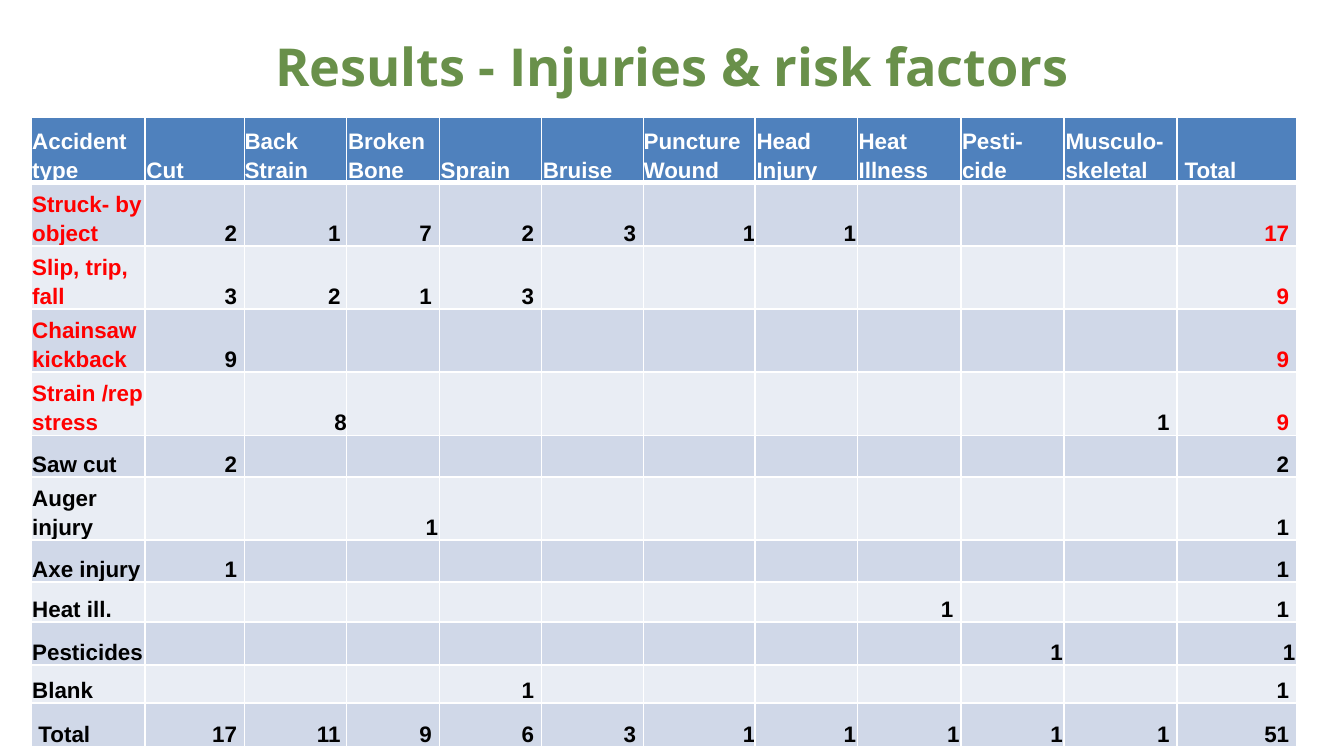
from dataclasses import dataclass

from lxml import etree
from pptx import Presentation
from pptx import util as u
from pptx.dml.color import RGBColor
from pptx.enum import text
from pptx.oxml import ns


@dataclass(frozen=True)
class Theme:
    title: str = "69904A"
    header: str = "4F81BD"
    bands: tuple = ("D0D8E8", "E9EDF4")
    white: str = "FFFFFF"
    ink: str = "000000"
    alert: str = "FF0000"
    title_font: str = "Open Sans"
    table_font: str = "Arial"
    title_size: int = 28
    table_size: int = 12
    line_spacing: float = 1.15
    rule: int = 1
    header_rule: int = 3


THEME = Theme()

HEADINGS = ["Accident type", "Cut", "Back\nStrain", "Broken Bone", "Sprain", "Bruise",
            "Puncture\nWound", "Head\nInjury", "Heat\nIllness", "Pesti-cide",
            "Musculo-skeletal", " Total"]
INJURIES = [
    "Struck- by object|2 |1 |7 |2 |3 |1|1||||17 ",
    "Slip, trip, fall|3 |2 |1 |3 |||||||9 ",
    "Chainsaw kickback|9 ||||||||||9 ",
    "Strain /rep stress||8||||||||1 |9 ",
    "Saw cut|2 ||||||||||2 ",
    "Auger injury|||1||||||||1 ",
    "Axe injury|1 ||||||||||1 ",
    "Heat ill.||||||||1 |||1 ",
    "Pesticides|||||||||1||1",
    "Blank||||1 |||||||1 ",
    " Total|17 |11 |9 |6 |3 |1|1|1|1|1 |51 ",
]
COLUMN_WIDTHS = [0.85, 0.74, 0.76, 0.69, 0.76, 0.76, 0.83, 0.76, 0.77, 0.77, 0.84, 0.89]
ROW_HEIGHTS = [0.49, 0.45, 0.45, 0.45, 0.45, 0.31, 0.45, 0.31, 0.3, 0.32, 0.28, 0.33]
ALERT_ROWS = range(1, 5)   # most frequent accident types
FLUSH_COLUMNS = (2, 6)     # columns without cell margins


def style_font(font, name, size, color):
    font.name, font.size, font.bold = name, u.Pt(size), True
    font.color.rgb = RGBColor.from_string(color)


def add_borders(cell, top, bottom):
    """White rules on all four sides; they come before the fill in the XML."""
    properties = cell._tc.get_or_add_tcPr()
    widths = {"a:lnL": THEME.rule, "a:lnR": THEME.rule, "a:lnT": top, "a:lnB": bottom}
    for position, (side, width) in enumerate(widths.items()):
        line = etree.Element(ns.qn(side), w=str(u.Pt(width)))
        fill = etree.SubElement(line, ns.qn("a:solidFill"))
        etree.SubElement(fill, ns.qn("a:srgbClr"), val=THEME.white)
        properties.insert(position, line)


def fill_cell(cell, row, column, content):
    last_column = len(HEADINGS) - 1
    if row == 0:
        color, background = THEME.white, THEME.header
    else:
        alert = row in ALERT_ROWS and column in (0, last_column)
        color = THEME.alert if alert else THEME.ink
        background = THEME.bands[(row - 1) % 2]

    cell.fill.solid()
    cell.fill.fore_color.rgb = RGBColor.from_string(background)
    add_borders(cell,
                top=THEME.header_rule if row == 1 else THEME.rule,
                bottom=THEME.header_rule if row == 0 else THEME.rule)
    cell.vertical_anchor = text.MSO_ANCHOR.BOTTOM
    margin = u.Inches(0 if column in FLUSH_COLUMNS else 0.01)
    cell.margin_left = cell.margin_right = cell.margin_top = margin
    cell.margin_bottom = 0

    cell.text_frame.text = content
    for paragraph in cell.text_frame.paragraphs:
        paragraph.line_spacing = THEME.line_spacing
        paragraph.space_before = paragraph.space_after = u.Pt(0)
        if row and column:
            paragraph.alignment = text.PP_ALIGN.RIGHT
        style_font(paragraph.font, THEME.table_font, THEME.table_size, color)
        # Keeps the paragraph end from stretching the row
        etree.SubElement(paragraph._p, ns.qn("a:endParaRPr"),
                         sz=str(THEME.table_size * 100))


def add_title(slide, left, top, width, height):
    title = slide.shapes.add_textbox(*map(u.Inches, (left, top, width, height)))
    frame = title.text_frame
    frame.word_wrap = True
    frame.vertical_anchor = text.MSO_ANCHOR.MIDDLE
    frame.text = "Results - Injuries & risk factors"
    heading = frame.paragraphs[0]
    heading.alignment = text.PP_ALIGN.CENTER
    style_font(heading.font, THEME.title_font, THEME.title_size, THEME.title)


def add_injury_table(slide, left, top, width, height):
    rows = [HEADINGS] + [line.split("|") for line in INJURIES]
    table = slide.shapes.add_table(len(rows), len(HEADINGS),
                                   *map(u.Inches, (left, top, width, height))).table
    # Column and row sizes share out the given box
    for column, share in zip(table.columns, COLUMN_WIDTHS):
        column.width = u.Inches(width * share / sum(COLUMN_WIDTHS))
    for row, share in zip(table.rows, ROW_HEIGHTS):
        row.height = u.Inches(height * share / sum(ROW_HEIGHTS))
    for r, contents in enumerate(rows):
        for c, content in enumerate(contents):
            fill_cell(table.cell(r, c), r, c, content)


def main():
    deck = Presentation()
    # Widescreen, 16:9
    deck.slide_width = u.Inches(10)
    deck.slide_height = u.Inches(10 * 9 / 16)
    slide = deck.slides.add_slide(deck.slide_layouts[6])
    add_title(slide, 0.35, 0.17, 9.3, 0.63)
    add_injury_table(slide, 0.23, 0.87, 9.42, 4.59)
    deck.save("out.pptx")


if __name__ == "__main__":
    main()
